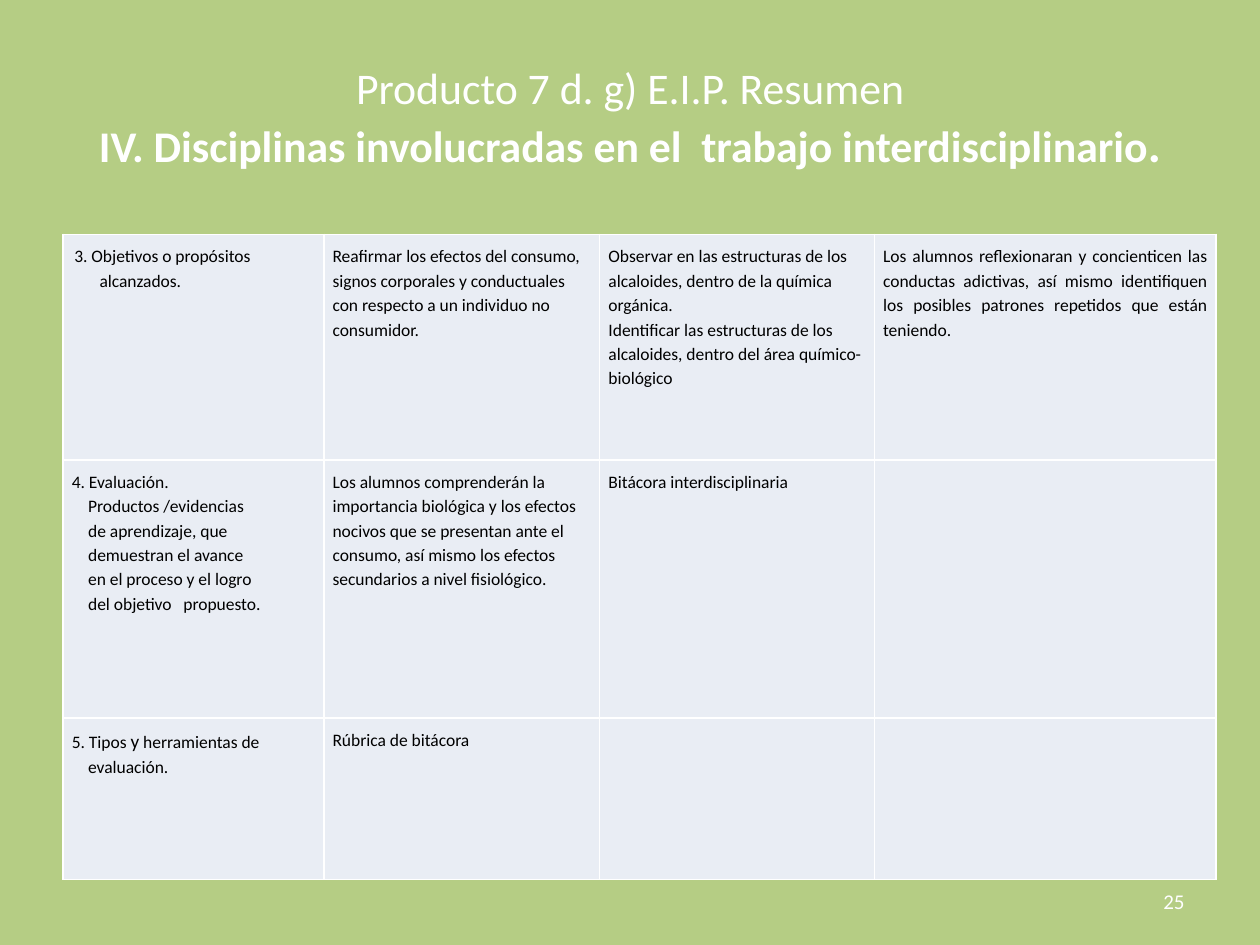
import lxml.etree
import pptx
import pptx.dml.color
import pptx.enum.text
import pptx.oxml.ns
import pptx.util
from pptx.util import Inches

COLORS = {"background": "B5CD84", "cell": "E9EDF4", "text": "000000", "white": "FFFFFF"}
FONT = "Calibri"
ALIGN = pptx.enum.text.PP_ALIGN
MIDDLE = pptx.enum.text.MSO_ANCHOR.MIDDLE


def set_font(font, size, color):
    font.name = FONT
    font.size = pptx.util.Pt(size)
    font.color.rgb = pptx.dml.color.RGBColor.from_string(COLORS[color])


def add_borders(cell):
    """Draw a 1 pt white line on all four sides; borders precede the fill in tcPr."""
    properties = cell._tc.get_or_add_tcPr()
    for position, side in enumerate(("lnL", "lnR", "lnT", "lnB")):
        line = lxml.etree.Element(pptx.oxml.ns.qn("a:" + side), w=str(pptx.util.Pt(1)))
        fill = lxml.etree.SubElement(line, pptx.oxml.ns.qn("a:solidFill"))
        lxml.etree.SubElement(fill, pptx.oxml.ns.qn("a:srgbClr"), val=COLORS["white"])
        properties.insert(position, line)


presentation = pptx.Presentation()
presentation.slide_width = Inches(10)
presentation.slide_height = Inches(7.5)
slide = presentation.slides.add_slide(presentation.slide_layouts[5])
slide.background.fill.solid()
slide.background.fill.fore_color.rgb = pptx.dml.color.RGBColor.from_string(COLORS["background"])

# Title
title = slide.shapes.title
title.left, title.top, title.width, title.height = (Inches(n) for n in (0.5, 0.3, 9, 1.25))
title.text_frame.auto_size = pptx.enum.text.MSO_AUTO_SIZE.NONE
title.text_frame.vertical_anchor = MIDDLE
paragraph = title.text_frame.paragraphs[0]
paragraph.alignment = ALIGN.CENTER
title_runs = [
    ("Producto 7 d. g) E.I.P. Resumen", 25, False),
    ("IV. Disciplinas involucradas en el  trabajo interdisciplinario", 25, True),
    (".", 28, True),
]
for index, (text, size, bold) in enumerate(title_runs):
    if index == 1:
        paragraph.add_line_break()
    run = paragraph.add_run()
    run.text = text
    run.font.bold = bold
    set_font(run.font, size, "white")

# Table of disciplines: each cell is a list of paragraphs
column_widths = [2.07, 2.19, 2.18, 2.71]
row_heights = [1.79, 2.05, 1.28]
rows = [
    [
        ["3. Objetivos o propósitos alcanzados."],
        ["Reafirmar los efectos del consumo, signos corporales y conductuales "
         "con respecto a un individuo no consumidor."],
        ["Observar en las estructuras de los alcaloides, dentro de la química orgánica.",
         "Identificar las estructuras de los alcaloides, dentro del área químico-biológico"],
        ["Los alumnos reflexionaran y concienticen las conductas adictivas, así mismo "
         "identifiquen los posibles patrones repetidos que están teniendo."],
    ],
    [
        ["4. Evaluación.", "Productos /evidencias", "de aprendizaje, que",
         "demuestran el avance", "en el proceso y el logro", "del objetivo   propuesto."],
        ["Los alumnos comprenderán la importancia biológica y los efectos nocivos que se "
         "presentan ante el consumo, así mismo los efectos secundarios a nivel fisiológico."],
        ["Bitácora interdisciplinaria"],
        [""],
    ],
    [
        ["5. Tipos y herramientas de", "evaluación."],
        ["Rúbrica de bitácora"],
        [""],
        [""],
    ],
]
table = slide.shapes.add_table(
    len(rows), len(column_widths), Inches(0.5), Inches(1.86),
    Inches(sum(column_widths)), Inches(sum(row_heights))).table
table.first_row = False
table.horz_banding = False
for column, width in zip(table.columns, column_widths):
    column.width = Inches(width)
for row, height in zip(table.rows, row_heights):
    row.height = Inches(height)

for row_index, row_texts in enumerate(rows):
    for column_index, texts in enumerate(row_texts):
        cell = table.cell(row_index, column_index)
        cell.margin_left = cell.margin_right = Inches(0.07)
        cell.margin_top = cell.margin_bottom = Inches(0.07)
        cell.fill.solid()
        cell.fill.fore_color.rgb = pptx.dml.color.RGBColor.from_string(COLORS["cell"])
        add_borders(cell)
        cell.text = "\n".join(texts)
        for line_index, paragraph in enumerate(cell.text_frame.paragraphs):
            paragraph.line_spacing = 1.15
            set_font(paragraph.font, 10, "text")
            if column_index == 0 and line_index > 0:
                paragraph._p.get_or_add_pPr().set("marL", str(Inches(0.13)))

hanging = table.cell(0, 0).text_frame.paragraphs[0]._p.get_or_add_pPr()
hanging.set("marL", str(Inches(0.22)))
hanging.set("indent", str(Inches(-0.2)))
table.cell(0, 3).text_frame.paragraphs[0].alignment = ALIGN.JUSTIFY

# The "y" of the last row is one point larger
paragraph = table.cell(2, 0).text_frame.paragraphs[0]
paragraph.runs[0].text = "5. Tipos "
for text, size in (("y", 11), (" herramientas de", 10)):
    run = paragraph.add_run()
    run.text = text
    run.font.size = pptx.util.Pt(size)

# Page number
number = slide.shapes.add_textbox(Inches(7.17), Inches(6.95), Inches(2.33), Inches(0.4))
number.text_frame.word_wrap = True
number.text_frame.vertical_anchor = MIDDLE
paragraph = number.text_frame.paragraphs[0]
paragraph.text = "25"
paragraph.alignment = ALIGN.RIGHT
set_font(paragraph.font, 12, "white")

presentation.save("out.pptx")
